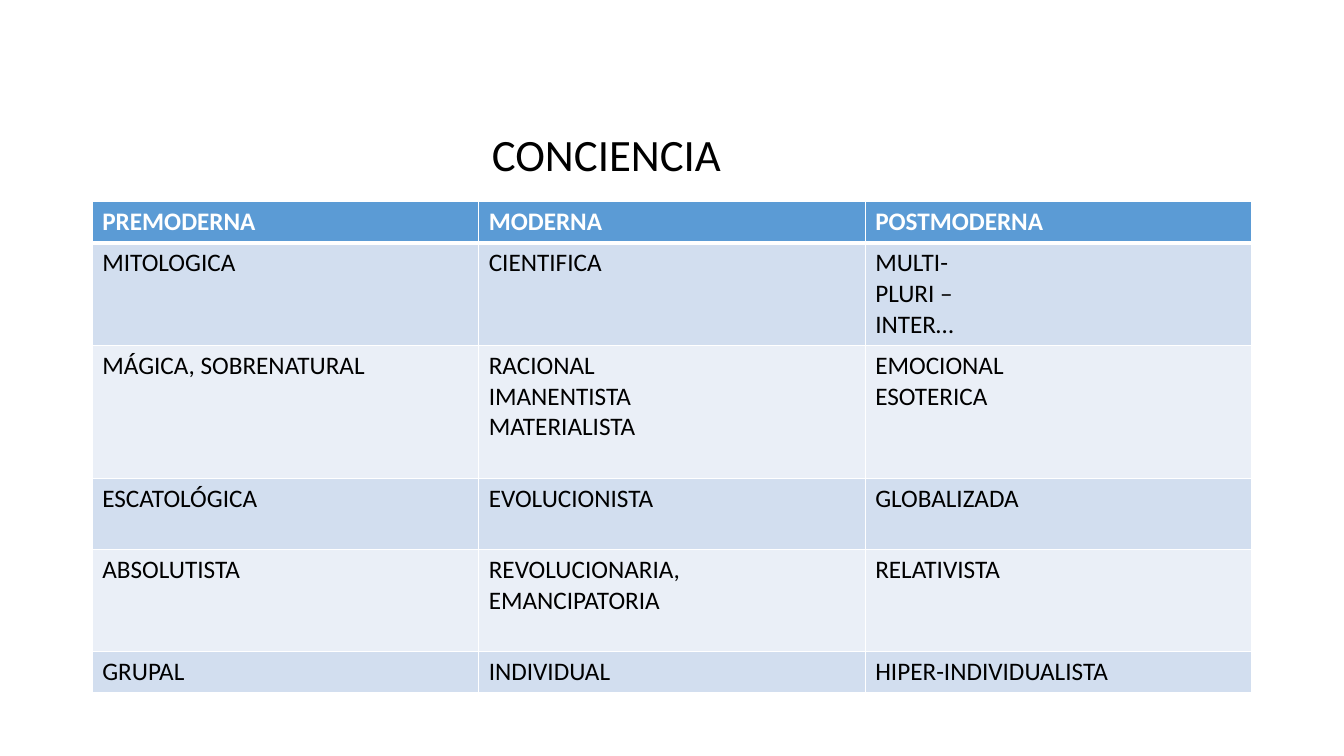
from dataclasses import dataclass
from lxml.etree import SubElement
from pptx import Presentation
from pptx.dml.color import RGBColor
from pptx.oxml.ns import qn
from pptx.util import Inches, Pt

TITLE = "CONCIENCIA"
HEADER = ("PREMODERNA", "MODERNA", "POSTMODERNA")
BODY = [
    ("MITOLOGICA", "CIENTIFICA", "MULTI-\nPLURI –\nINTER…"),
    ("MÁGICA, SOBRENATURAL", "RACIONAL\nIMANENTISTA\nMATERIALISTA", "EMOCIONAL\nESOTERICA"),
    ("ESCATOLÓGICA", "EVOLUCIONISTA", "GLOBALIZADA"),
    ("ABSOLUTISTA", "REVOLUCIONARIA, EMANCIPATORIA", "RELATIVISTA"),
    ("GRUPAL", "INDIVIDUAL", "HIPER-INDIVIDUALISTA"),
]
ROW_HEIGHTS = (0.41, 1.01, 1.32, 0.71, 1.01, 0.41)
SLIDE_W, SLIDE_H = 13.33, 7.5
TABLE_W, TABLE_TOP = 11.5, 2
TITLE_BOX = (4.78, 1.21, 2.5, 0.64)


@dataclass(frozen=True)
class Theme:
    font: str = "Calibri"
    title_size: int = 32
    cell_size: int = 18
    ink: str = "000000"
    white: str = "FFFFFF"
    header: str = "5B9BD5"
    bands: tuple = ("D2DEEF", "EAEFF7")


THEME = Theme()


def write(tf, text, size, color, bold=False):
    tf.text = text
    style = {"name": THEME.font, "size": Pt(size), "bold": bold}
    for p in tf.paragraphs:
        for r in p.runs:
            for name, value in style.items():
                setattr(r.font, name, value)
            r.font.color.rgb = RGBColor.from_string(color)


def add_borders(cell, widths):
    """Draw white borders; widths maps each side (L, R, T, B) to points."""
    tc_pr = cell._tc.get_or_add_tcPr()
    for side, width in widths.items():
        ln = SubElement(tc_pr, qn(f"a:ln{side}"), w=str(Pt(width)))
        SubElement(SubElement(ln, qn("a:solidFill")), qn("a:srgbClr"), val=THEME.white)


def add_title(s):
    tf = s.shapes.add_textbox(*map(Inches, TITLE_BOX)).text_frame
    tf.word_wrap = False
    write(tf, TITLE, THEME.title_size, THEME.ink)


def add_consciousness_table(s):
    rows = [HEADER, *BODY]
    left = (SLIDE_W - TABLE_W) / 2
    box = map(Inches, (left, TABLE_TOP, TABLE_W, sum(ROW_HEIGHTS)))
    table = s.shapes.add_table(len(rows), len(HEADER), *box).table
    for i, (texts, height) in enumerate(zip(rows, ROW_HEIGHTS)):
        table.rows[i].height = Inches(height)
        is_header = i == 0
        fill = THEME.header if is_header else THEME.bands[(i - 1) % 2]
        color = THEME.white if is_header else THEME.ink
        widths = {"L": 1, "R": 1, "T": 3 if i == 1 else 1, "B": 3 if is_header else 1}
        for j, text in enumerate(texts):
            cell = table.cell(i, j)
            write(cell.text_frame, text, THEME.cell_size, color, is_header)
            add_borders(cell, widths)
            cell.fill.solid()
            cell.fill.fore_color.rgb = RGBColor.from_string(fill)


def main():
    prs = Presentation()
    prs.slide_width, prs.slide_height = Inches(SLIDE_W), Inches(SLIDE_H)
    s = prs.slides.add_slide(prs.slide_layouts[6])
    add_consciousness_table(s)
    add_title(s)
    prs.save("out.pptx")


if __name__ == "__main__":
    main()
